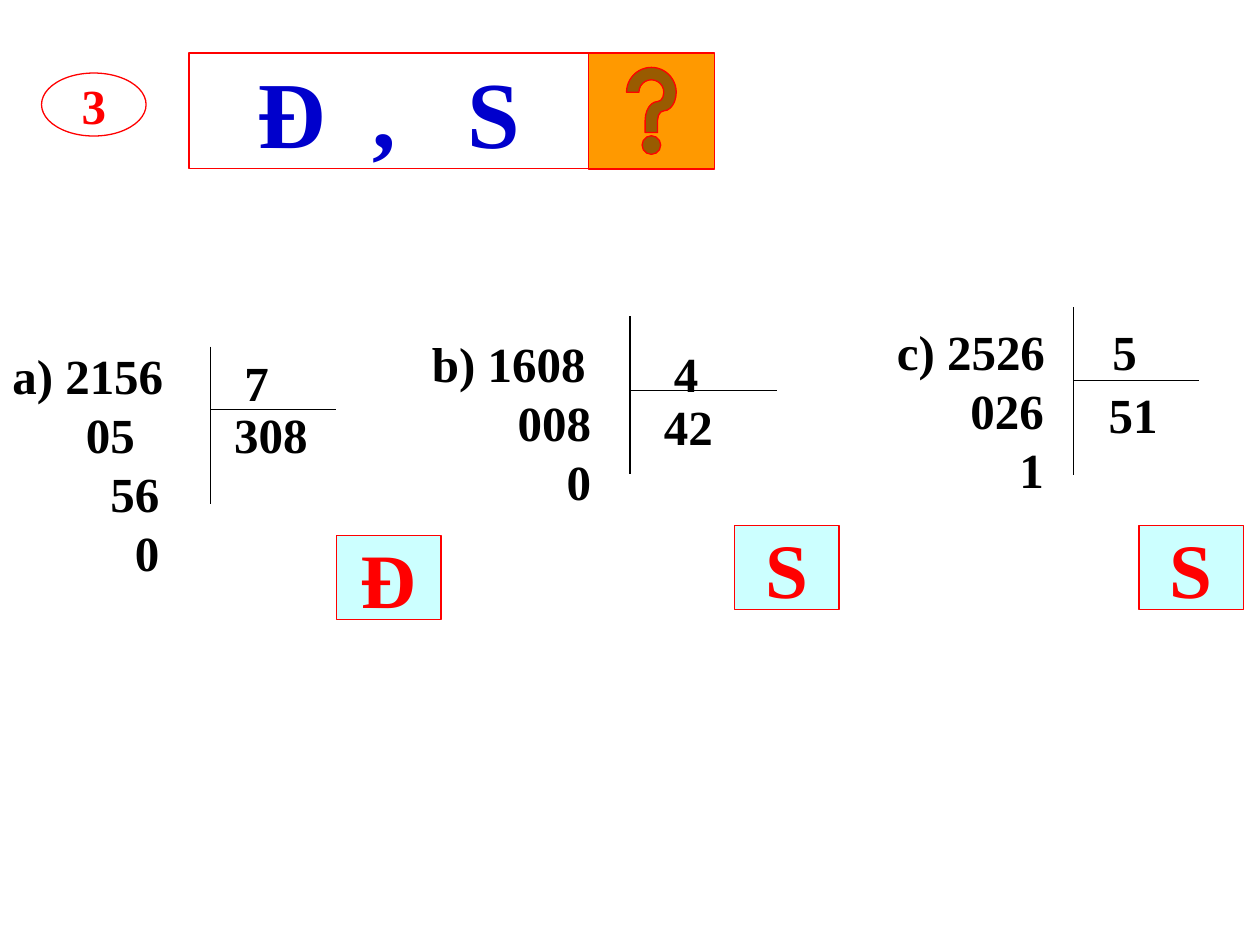
import pptx
import pptx.util
import pptx.dml.color
import pptx.enum.shapes
import pptx.enum.text
import pptx.oxml.ns
from lxml import etree

Inches, Pt = pptx.util.Inches, pptx.util.Pt
SHAPE = pptx.enum.shapes.MSO_SHAPE
ALIGN = pptx.enum.text.PP_ALIGN
ANCHOR = pptx.enum.text.MSO_ANCHOR
qn = pptx.oxml.ns.qn

FONT = "Times New Roman"
RED, BLUE, BLACK, WHITE = "FF0000", "0000CC", "000000", "FFFFFF"
ORANGE, CYAN = "FF9900", "CCFFFF"
DIGIT_SIZE = 28
HALF_DIGIT = DIGIT_SIZE / 4 / 72

TITLE = {"text": "Đ\t,\tS", "at": (1.5, 0.42, 3.17, 0.92), "tabs": (0.92, 1.67)}

DIVISIONS = [
    {"work": [("a) 2156", 0), ("05", 6), ("56", 8), ("0", 10)],
     "work_at": (0, 2.69, 1.83, 1.97),
     "corner": (1.67, 3.25), "top": 2.75, "bottom": 4, "right": 2.67,
     "results": [("7", (1.84, 2.75, 0.42, 0.57)), ("308", (1.76, 3.16, 0.83, 0.57))]},
    {"work": [("b) 1608", 0), ("008", 7), ("0", 11)],
     "work_at": (3.33, 2.6, 1.5, 1.5),
     "corner": (5, 3.1), "top": 2.51, "bottom": 3.76, "right": 6.17,
     "results": [("4", (5.25, 2.68, 0.5, 0.57)), ("42", (5.17, 3.1, 0.75, 0.57))]},
    {"work": [("c) 2526", 0), ("026", 6), ("1", 10)],
     "work_at": (7.02, 2.5, 1.67, 1.5),
     "corner": (8.52, 3.02), "top": 2.44, "bottom": 3.77, "right": 9.52,
     "results": [("5", (8.73, 2.5, 0.58, 0.57)), ("51", (8.7, 3, 0.67, 0.57))]},
]

BADGES = [
    ("", SHAPE.ACTION_BUTTON_HELP, (4.67, 0.42, 1, 0.92), ORANGE, DIGIT_SIZE),
    ("Đ", SHAPE.RECTANGLE, (2.67, 4.25, 0.83, 0.67), CYAN, 44),
    ("S", SHAPE.RECTANGLE, (5.83, 4.17, 0.83, 0.67), CYAN, 44),
    ("S", SHAPE.RECTANGLE, (9.04, 4.17, 0.83, 0.67), CYAN, 44),
    ("3", SHAPE.OVAL, (0.33, 0.58, 0.83, 0.5), WHITE, DIGIT_SIZE),
]


def rgb(value):
    return pptx.dml.color.RGBColor.from_string(value)


def lengths(values):
    return [Inches(value) for value in values]


def style_text(para, size, color, align=ALIGN.LEFT):
    para.alignment = align
    para.line_spacing = Pt(round(size * 1.204, 1))
    para.space_before = Pt(0)
    para.font.name = FONT
    para.font.size = Pt(size)
    para.font.bold = True
    para.font.color.rgb = rgb(color)


def paint(shape, fill):
    shape.fill.solid()
    shape.fill.fore_color.rgb = rgb(fill)
    shape.line.color.rgb = rgb(RED)
    shape.line.width = Pt(0.75)


def add_title(page):
    title = page.shapes.title
    title.left, title.top, title.width, title.height = lengths(TITLE["at"])
    paint(title, WHITE)
    frame = title.text_frame
    frame.text = TITLE["text"]
    frame.auto_size = pptx.enum.text.MSO_AUTO_SIZE.NONE
    frame.vertical_anchor = ANCHOR.MIDDLE
    frame.margin_left = Inches(0.54)
    para = frame.paragraphs[0]
    style_text(para, 54, BLUE)
    tabs = etree.Element(qn("a:tabLst"))
    for position in TITLE["tabs"]:
        etree.SubElement(tabs, qn("a:tab"), pos=str(Inches(position)), algn="l")
    properties = para._p.get_or_add_pPr()
    properties.insert_element_before(tabs, "a:defRPr", "a:extLst")


def add_badge(page, text, kind, at, fill, size):
    badge = page.shapes.add_shape(kind, *lengths(at))
    badge.shadow.inherit = False
    paint(badge, fill)
    if text:
        frame = badge.text_frame
        frame.text = text
        frame.word_wrap = False
        frame.vertical_anchor = ANCHOR.MIDDLE
        style_text(frame.paragraphs[0], size, RED, ALIGN.CENTER)


def add_digits(group, rows, at):
    box = group.shapes.add_textbox(*lengths(at))
    frame = box.text_frame
    frame.word_wrap = True
    for index, (text, indent) in enumerate(rows):
        para = frame.add_paragraph() if index else frame.paragraphs[0]
        para.text = text
        style_text(para, DIGIT_SIZE, BLACK)
        if indent:
            para._p.get_or_add_pPr().set("marL", str(Inches(indent * HALF_DIGIT)))


def add_rule(group, start, end):
    rule = group.shapes.add_connector(
        pptx.enum.shapes.MSO_CONNECTOR.STRAIGHT, *lengths(start + end))
    rule.line.color.rgb = rgb(BLACK)
    rule.line.width = Pt(0.75)
    etree.SubElement(rule._element.spPr, qn("a:effectLst"))


def add_division(page, division):
    group = page.shapes.add_group_shape()
    x, y = division["corner"]
    add_digits(group, division["work"], division["work_at"])
    add_rule(group, (x, division["top"]), (x, division["bottom"]))
    add_rule(group, (x, y), (division["right"], y))
    for text, at in division["results"]:
        add_digits(group, [(text, 0)], at)


def main():
    deck = pptx.Presentation()
    deck.slide_width, deck.slide_height = Inches(10), Inches(7.5)
    page = deck.slides.add_slide(deck.slide_layouts.get_by_name("Title Only"))
    add_title(page)
    for division in DIVISIONS:
        add_division(page, division)
    for badge in BADGES:
        add_badge(page, *badge)
    deck.save("out.pptx")


if __name__ == "__main__":
    main()
